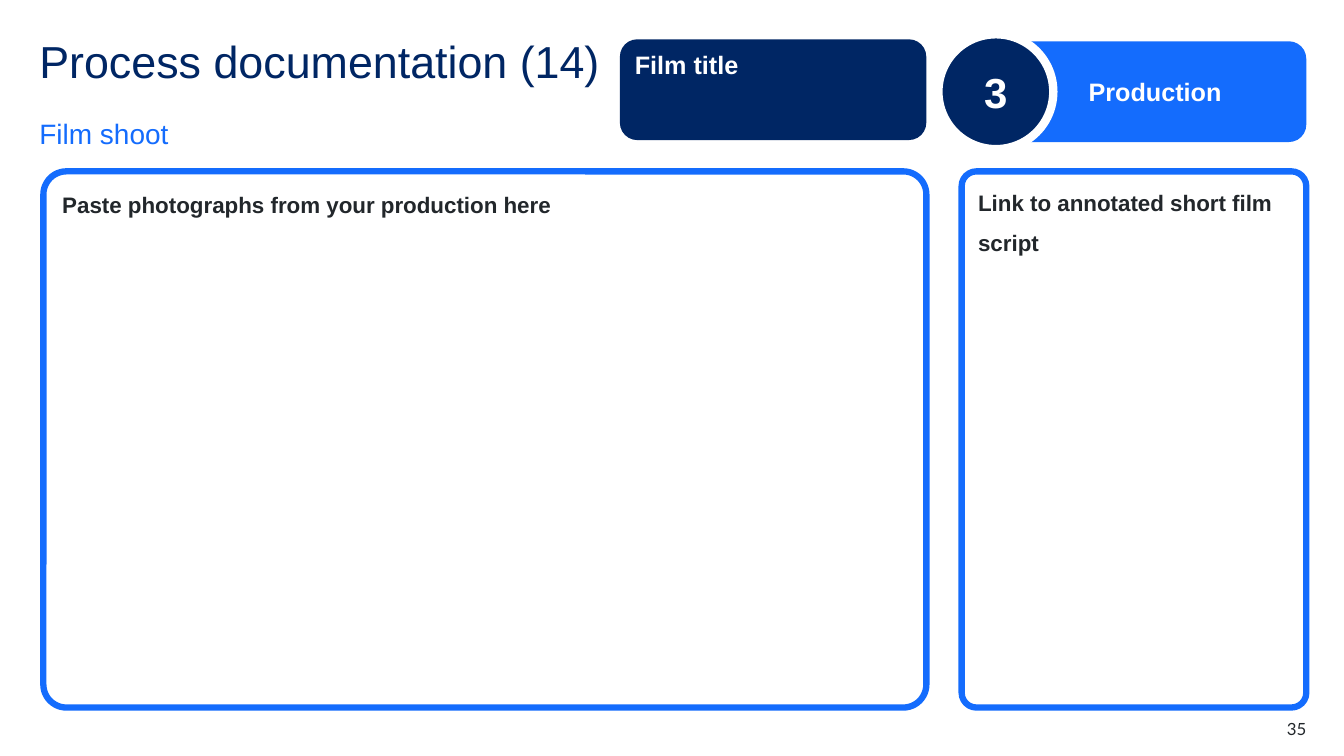
"""Builds the film shoot page of a process documentation deck."""
from dataclasses import dataclass, field
from typing import Optional

from pptx import Presentation
from pptx.dml.color import RGBColor as RGB
from pptx.enum.shapes import MSO_SHAPE as SHAPE
from pptx.enum.text import MSO_ANCHOR as ANCHOR, PP_ALIGN as ALIGN
from pptx.slide import Slide
from pptx.util import Pt

COLORS = {"navy": "002664", "blue": "146CFD", "white": "FFFFFF", "ink": "22272B"}
INSET = (7.2, 3.6, 7.2, 3.6)
NO_INSET = (0, 0, 0, 0)
PANEL_INSET = (8.64, 0, 0, 0)
PANEL_TOP, PANEL_HEIGHT = 122.4, 383
PANEL_PARA = {"line_spacing": 1.5, "space_before": Pt(6), "space_after": Pt(6)}


@dataclass
class Box:
    text: str
    at: tuple[float, float, float, float]
    size: float
    color: str = "white"
    bold: bool = True
    font: str = "Arial"
    shape: Optional[SHAPE] = None
    adj: Optional[float] = None
    fill: str = "white"
    line: Optional[tuple[str, float]] = None
    inset: tuple[float, float, float, float] = INSET
    anchor: ANCHOR = ANCHOR.TOP
    para: dict = field(default_factory=dict)


def label(text: str, at: tuple, size: float, color: str, **kw) -> Box:
    return Box(text, at, size, color, bold=False, inset=NO_INSET, **kw)


def panel(text: str, left: float, width: float) -> Box:
    return Box(text, (left, PANEL_TOP, width, PANEL_HEIGHT), 16, "ink",
               shape=SHAPE.ROUNDED_RECTANGLE, adj=0.043, line=("blue", 4.5),
               inset=PANEL_INSET, para=PANEL_PARA)


def banner(text: str, at: tuple, fill: str, **kw) -> Box:
    return Box(text, at, 18, shape=SHAPE.ROUNDED_RECTANGLE, adj=0.173, fill=fill, **kw)


BOXES = [
    label("Process documentation (14)", (28.1, 28.1, 414, 43.2), 32, "navy",
          para={"line_spacing": 0.9}),
    label("Film shoot", (28.1, 77, 398.2, 24.5), 20, "blue", anchor=ANCHOR.MIDDLE,
          para={"line_spacing": 1.5, "space_after": Pt(12)}),
    banner("Film title", (442.8, 28.1, 218.9, 72), "navy"),
    banner("Production", (724.3, 29.5, 208.8, 72), "blue",
           inset=(49.7, 3.6, 7.2, 3.6), anchor=ANCHOR.MIDDLE),
    Box("3", (670.3, 24.5, 82.1, 82.1), 30, shape=SHAPE.OVAL, fill="navy",
        line=("white", 6), anchor=ANCHOR.MIDDLE, para={"alignment": ALIGN.CENTER}),
    panel("Paste photographs from your production here", 31, 630.7),
    panel("Link to annotated short film script", 686.9, 246.2),
    label("35", (876.2, 513.4, 56.9, 14.4), 12, "ink", font="Lato",
          para={"alignment": ALIGN.RIGHT}),
]


def rgb(name: str) -> RGB:
    return RGB.from_string(COLORS[name])


def set_all(obj: object, values: dict) -> None:
    for name, value in values.items():
        setattr(obj, name, value)


def draw(s: Slide, box: Box) -> None:
    at = [Pt(v) for v in box.at]
    if box.shape is None:
        sp = s.shapes.add_textbox(*at)
    else:
        sp = s.shapes.add_shape(box.shape, *at)
        sp.shadow.inherit = False
        sp.fill.solid()
        sp.fill.fore_color.rgb = rgb(box.fill)
        if box.adj is not None:
            sp.adjustments[0] = box.adj
        if box.line:
            color, width = box.line
            sp.line.color.rgb = rgb(color)
            sp.line.width = Pt(width)
        else:
            sp.line.fill.background()
    left, top, right, bottom = (Pt(v) for v in box.inset)
    tf = sp.text_frame
    set_all(tf, {"word_wrap": True, "vertical_anchor": box.anchor, "margin_left": left,
                 "margin_top": top, "margin_right": right, "margin_bottom": bottom})
    p = tf.paragraphs[0]
    set_all(p, {"alignment": ALIGN.LEFT, **box.para})
    r = p.add_run()
    r.text = box.text
    set_all(r.font, {"name": box.font, "size": Pt(box.size), "bold": box.bold})
    r.font.color.rgb = rgb(box.color)


def main() -> None:
    prs = Presentation()
    set_all(prs, {"slide_width": Pt(960), "slide_height": Pt(540)})
    s = prs.slides.add_slide(prs.slide_layouts[6])
    for box in BOXES:
        draw(s, box)
    prs.save("out.pptx")


if __name__ == "__main__":
    main()
